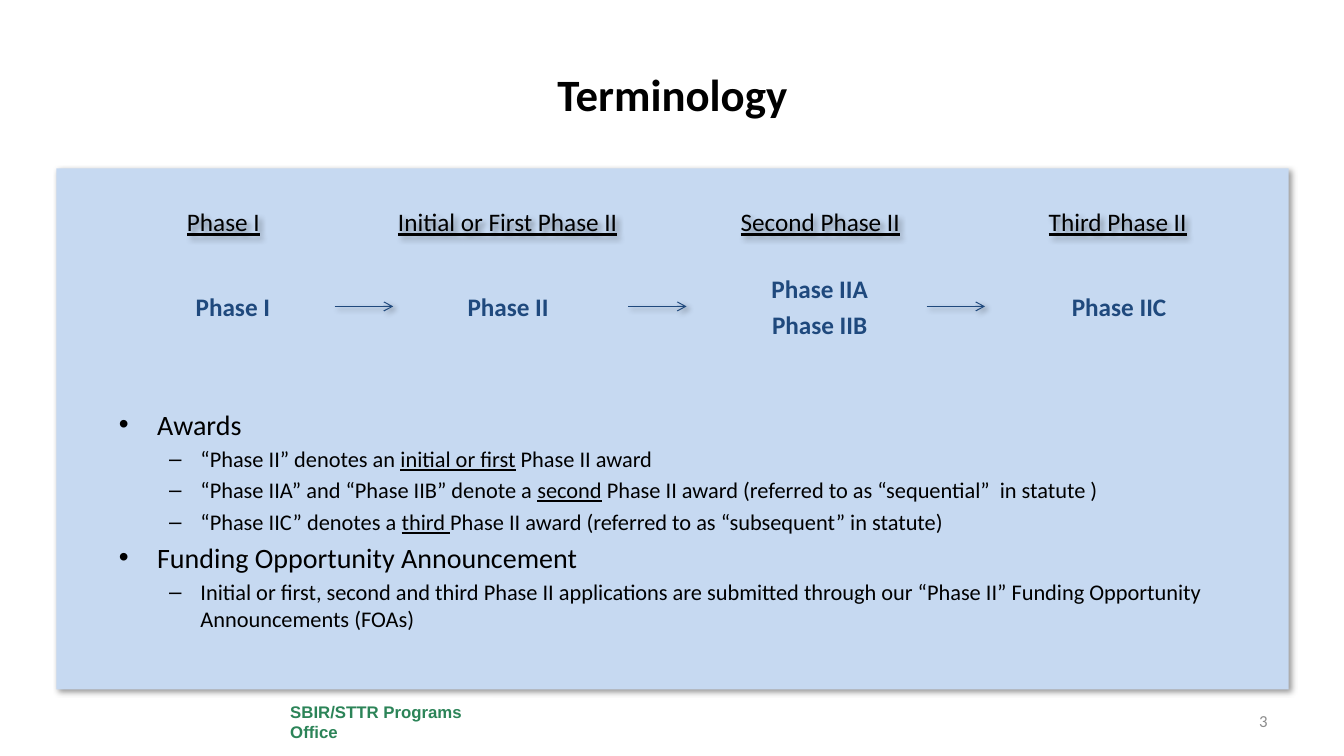
from lxml import etree
from pptx import Presentation
from pptx.dml.color import RGBColor
from pptx.enum.shapes import MSO_CONNECTOR as CONN, MSO_SHAPE as SHAPE
from pptx.enum.text import MSO_ANCHOR as ANCHOR, PP_ALIGN as ALIGN
from pptx.oxml.ns import qn
from pptx.util import Inches, Pt

BLACK = RGBColor(0x00, 0x00, 0x00)
WHITE = RGBColor(0xFF, 0xFF, 0xFF)
NAVY = RGBColor(0x1F, 0x49, 0x7D)
GREEN = RGBColor(0x2C, 0x84, 0x58)
GREY = RGBColor(0x8C, 0x8C, 0x8C)
PALE_BLUE = RGBColor(0xC6, 0xD9, 0xF1)

SLIDE_W, SLIDE_H = 13.33, 7.5
PANEL = (0.56, 1.67, 12.22, 5.17)

HEADING = dict(size=Pt(18), color=BLACK, underline=True)
PHASE = dict(size=Pt(18), color=NAVY, bold=True)

# Column offsets from the panel's left edge: heading, phase names
HEADING_W, PHASE_W = 2.65, 2.28
HEADING_Y, PHASE_Y, ARROW_Y = 0.31, 1.17, 1.37
COLUMNS = [
    (0.33, "Phase I", 0.61, ["Phase I"]),
    (3.15, "Initial or First Phase II", 3.34, ["Phase II"]),
    (6.25, "Second Phase II", 6.43, ["Phase IIA", "Phase IIB"]),
    (9.20, "Third Phase II", 9.40, ["Phase IIC"]),
]
ARROW_XS, ARROW_LEN = (2.76, 5.67, 8.63), 0.58

# Level, then text pieces; every second piece is underlined
BULLETS = [
    (0, ["Awards"]),
    (1, ["“Phase II” denotes an ", "initial or first", " Phase II award"]),
    (1, ["“Phase IIA” and “Phase IIB” denote a ", "second",
         " Phase II award (referred to as “sequential”  in statute )"]),
    (1, ["“Phase IIC” denotes a ", "third ",
         "Phase II award (referred to as “subsequent” in statute)"]),
    (0, ["Funding Opportunity Announcement"]),
    (1, ["Initial or first, second and third Phase II applications are submitted "
         "through our “Phase II” Funding Opportunity Announcements (FOAs)"]),
]
# Bullet sign, text size, left margin and hanging indent for each level
LEVELS = [("•", 20, 0.38, 0.38), ("–", 16, 0.81, 0.31)]


def add_shadow(sp):
    sp_pr = sp._element.spPr
    for old in sp_pr.findall(qn("a:effectLst")):
        sp_pr.remove(old)
    effects = etree.SubElement(sp_pr, qn("a:effectLst"))
    shadow = etree.SubElement(
        effects, qn("a:outerShdw"), blurRad=str(Pt(4)), dist=str(Pt(3)),
        dir=str(45 * 60000), algn="tl", rotWithShape="0")
    color = etree.SubElement(shadow, qn("a:srgbClr"), val=str(BLACK))
    etree.SubElement(color, qn("a:alpha"), val="40000")


def set_font(font, color, **values):
    font.name = "Calibri"
    font.color.rgb = color
    for name, value in values.items():
        setattr(font, name, value)


def add_rect(s, box, fill):
    sp = s.shapes.add_shape(SHAPE.RECTANGLE, *map(Inches, box))
    sp.shadow.inherit = False
    sp.fill.solid()
    sp.fill.fore_color.rgb = fill
    sp.line.fill.background()
    return sp


def write(sp, text, align, anchor, fmt):
    tf = sp.text_frame
    tf.word_wrap = True
    tf.vertical_anchor = anchor
    p = tf.paragraphs[0]
    p.alignment = align
    r = p.add_run()
    r.text = text
    set_font(r.font, **fmt)


def add_text(s, box, text, fmt, align=ALIGN.CENTER, anchor=ANCHOR.MIDDLE):
    sp = s.shapes.add_textbox(*map(Inches, box))
    write(sp, text, align, anchor, fmt)
    return sp


def add_arrow(s, x, y, length):
    cx = s.shapes.add_connector(
        CONN.STRAIGHT, Inches(x), Inches(y), Inches(x + length), Inches(y))
    cx.line.color.rgb = NAVY
    cx.line.width = Pt(0.75)
    etree.SubElement(cx.line._get_or_add_ln(), qn("a:tailEnd"), type="arrow")
    add_shadow(cx)


def phase_flow(s, box):
    left, top = box[:2]
    for heading_x, heading, phase_x, phases in COLUMNS:
        sp = add_text(s, (left + heading_x, top + HEADING_Y, HEADING_W, 0.44),
                      heading, HEADING)
        add_shadow(sp)
        # Several names are spread evenly about the row's middle
        for i, phase in enumerate(phases):
            y = top + PHASE_Y + 0.36 * (i - (len(phases) - 1) / 2)
            add_text(s, (left + phase_x, y, PHASE_W, 0.4), phase, PHASE,
                     anchor=ANCHOR.TOP)
    for x in ARROW_XS:
        add_arrow(s, left + x, top + ARROW_Y, ARROW_LEN)


def bullet_list(s, box):
    left, top = box[:2]
    sp = s.shapes.add_textbox(
        *map(Inches, (left + 0.52, top + 2.32, 11.25, 2.88)))
    tf = sp.text_frame
    tf.word_wrap = True
    for i, (level, pieces) in enumerate(BULLETS):
        sign, size, margin, hang = LEVELS[level]
        p = tf.add_paragraph() if i else tf.paragraphs[0]
        p.level = level
        if i:
            p.space_before = Pt(size * 0.2)
        p_pr = p._p.get_or_add_pPr()
        p_pr.set("marL", str(Inches(margin)))
        p_pr.set("indent", str(-Inches(hang)))
        etree.SubElement(p_pr, qn("a:buFont"), typeface="Arial")
        etree.SubElement(p_pr, qn("a:buChar"), char=sign)
        for j, piece in enumerate(pieces):
            r = p.add_run()
            r.text = piece
            set_font(r.font, BLACK, size=Pt(size), underline=j % 2 == 1)


def footer(s, box):
    left, top, width, height = box
    label = add_rect(s, (left + 2.78, top + 0.02, 2.11, 0.48), WHITE)
    write(label, "SBIR/STTR Programs Office", ALIGN.LEFT, ANCHOR.MIDDLE,
          dict(size=Pt(12), color=GREEN, bold=True, name="Arial"))
    add_text(s, (left + width - 2.77, top + 0.05, 2.11, 0.4), "3",
             dict(size=Pt(12), color=GREY), align=ALIGN.RIGHT)


def terminology_slide(prs):
    s = prs.slides.add_slide(prs.slide_layouts[6])
    # Panel and title
    add_shadow(add_rect(s, PANEL, PALE_BLUE))
    add_text(s, (0.67, 0.3, 12, 1.25), "Terminology",
             dict(size=Pt(32), color=BLACK, bold=True))
    # Panel contents
    phase_flow(s, PANEL)
    bullet_list(s, PANEL)
    # Footer strip
    footer(s, (0, 6.9, SLIDE_W, SLIDE_H - 6.9))


def main():
    prs = Presentation()
    prs.slide_width, prs.slide_height = Inches(SLIDE_W), Inches(SLIDE_H)
    terminology_slide(prs)
    prs.save("out.pptx")


if __name__ == "__main__":
    main()
